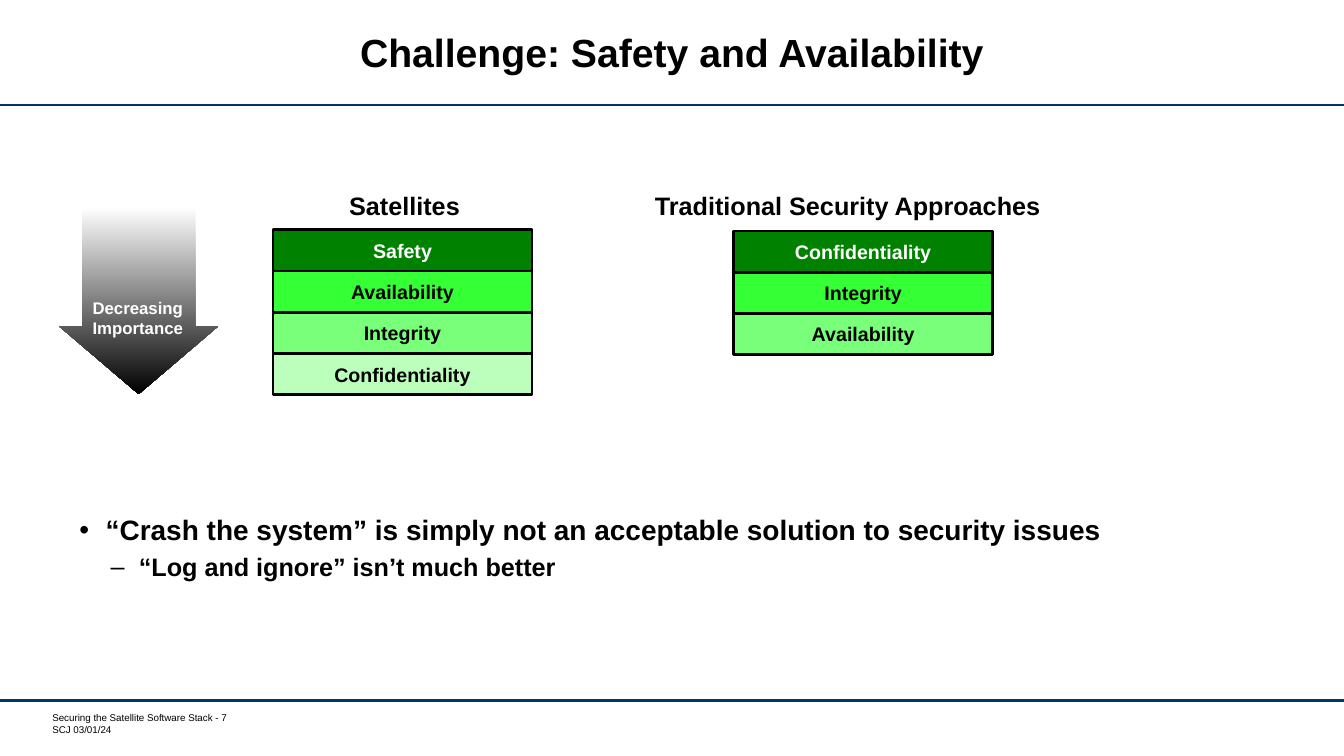
from dataclasses import dataclass

from lxml import etree
from pptx import Presentation
from pptx import util as u
from pptx.dml.color import RGBColor
from pptx.enum import shapes, text
from pptx.oxml import ns

FONT = "Arial"
BLACK, WHITE, NAVY = "000000", "FFFFFF", "003767"
RANK_FILLS = ["008200", "35FF35", "79FF79", "BCFFBC"]
RANK_WIDTH, RANK_HEIGHT = 6.53, 1.04
SLIDE_WIDTH, SLIDE_HEIGHT = 33.87, 19.05


@dataclass
class Box:
    """Position and size in centimetres."""
    left: float
    top: float
    width: float
    height: float

    def lengths(self) -> list[u.Cm]:
        return [u.Cm(n) for n in (self.left, self.top, self.width, self.height)]


@dataclass
class Ranking:
    heading: str
    heading_box: Box
    left: float
    top: float
    goals: list[str]


@dataclass
class Bullet:
    wording: str
    mark: str
    size: float
    margin: float
    hanging: float
    space_before: float


RANKINGS = [
    Ranking("Satellites", Box(8.53, 4.67, 3.33, 1.02), 6.88, 5.79,
            ["Safety", "Availability", "Integrity", "Confidentiality"]),
    Ranking("Traditional Security Approaches", Box(16.21, 4.67, 10.31, 1.02), 18.49, 5.82,
            ["Confidentiality", "Integrity", "Availability"]),
]
BULLETS = [
    Bullet("“Crash the system” is simply not an acceptable solution to security issues",
           "•", 20, 0.66, 0.66, 0),
    Bullet("“Log and ignore” isn’t much better", "–", 18, 1.5, 0.71, 6),
]


def color(hex_value: str) -> RGBColor:
    return RGBColor.from_string(hex_value)


def format_paragraph(paragraph, size: float, hex_value: str = BLACK, bold: bool = True,
                     alignment=text.PP_ALIGN.CENTER) -> None:
    paragraph.alignment = alignment
    for run in paragraph.runs:
        run.font.name = FONT
        run.font.size = u.Pt(size)
        run.font.bold = bold
        run.font.color.rgb = color(hex_value)


def add_label(slide, box: Box, wording: str, size: float, hex_value: str = BLACK,
              wrap: bool = False) -> None:
    frame = slide.shapes.add_textbox(*box.lengths()).text_frame
    frame.word_wrap = wrap
    frame.text = wording
    format_paragraph(frame.paragraphs[0], size, hex_value)


def add_rule(slide, top: float) -> None:
    rule = slide.shapes.add_connector(shapes.MSO_CONNECTOR.STRAIGHT, 0, u.Cm(top),
                                      u.Cm(SLIDE_WIDTH), u.Cm(top))
    rule.line.color.rgb = color(NAVY)
    rule.line.width = u.Pt(1.75)
    etree.SubElement(rule._element.spPr, ns.qn("a:effectLst"))


def add_title(slide, wording: str) -> None:
    title = slide.shapes.title
    title.left, title.top, title.width, title.height = Box(3.48, 0.28, 26.9, 2.26).lengths()
    frame = title.text_frame
    frame.text = wording
    frame.vertical_anchor = text.MSO_ANCHOR.MIDDLE
    frame.paragraphs[0].line_spacing = u.Pt(28)
    format_paragraph(frame.paragraphs[0], 28)


def add_footer(slide, wording: str) -> None:
    frame = slide.shapes.add_textbox(*Box(1.19, 17.93, 5.18, 0.61).lengths()).text_frame
    frame.word_wrap = True
    frame.margin_left = u.Cm(0.13)
    frame.margin_top = frame.margin_right = frame.margin_bottom = 0
    frame.text = wording
    for paragraph in frame.paragraphs:
        format_paragraph(paragraph, 7, bold=False, alignment=text.PP_ALIGN.LEFT)


def add_bullets(slide, box: Box, bullets: list[Bullet]) -> None:
    frame = slide.shapes.add_textbox(*box.lengths()).text_frame
    frame.word_wrap = True
    frame.text = "\n".join(bullet.wording for bullet in bullets)
    for level, (paragraph, bullet) in enumerate(zip(frame.paragraphs, bullets)):
        properties = paragraph._p.get_or_add_pPr()
        properties.set("marL", str(u.Cm(bullet.margin)))
        properties.set("indent", str(-u.Cm(bullet.hanging)))
        etree.SubElement(properties, ns.qn("a:buFont"), typeface=FONT)
        etree.SubElement(properties, ns.qn("a:buChar"), char=bullet.mark)
        paragraph.level = level
        paragraph.line_spacing = 0.9
        paragraph.space_before = u.Pt(bullet.space_before)
        format_paragraph(paragraph, bullet.size, alignment=text.PP_ALIGN.LEFT)


def add_ranking(slide, ranking: Ranking) -> None:
    add_label(slide, ranking.heading_box, ranking.heading, 18)
    for rank, (goal, fill) in enumerate(zip(ranking.goals, RANK_FILLS)):
        box = Box(ranking.left, ranking.top + rank * RANK_HEIGHT, RANK_WIDTH, RANK_HEIGHT)
        bar = slide.shapes.add_shape(shapes.MSO_SHAPE.RECTANGLE, *box.lengths())
        bar.shadow.inherit = False
        bar.fill.solid()
        bar.fill.fore_color.rgb = color(fill)
        bar.line.color.rgb = color(BLACK)
        bar.line.width = u.Pt(2)
        bar.text_frame.text = goal
        bar.text_frame.vertical_anchor = text.MSO_ANCHOR.MIDDLE
        format_paragraph(bar.text_frame.paragraphs[0], 14, BLACK if rank else WHITE)


def add_importance_arrow(slide) -> None:
    arrow = slide.shapes.add_shape(shapes.MSO_SHAPE.DOWN_ARROW,
                                   *Box(1.5, 5.21, 3.99, 4.72).lengths())
    arrow.shadow.inherit = False
    arrow.adjustments[0], arrow.adjustments[1] = 0.715, 0.426
    arrow.line.fill.background()
    arrow.fill.gradient()
    arrow.fill.gradient_angle = 270
    for stop, hex_value in zip(arrow.fill.gradient_stops, (WHITE, BLACK)):
        stop.color.rgb = color(hex_value)
    add_label(slide, Box(1.75, 7.37, 3.45, 1.27), "Decreasing Importance", 12, WHITE, wrap=True)


def main() -> None:
    presentation = Presentation()
    presentation.slide_width = u.Cm(SLIDE_WIDTH)
    presentation.slide_height = u.Cm(SLIDE_HEIGHT)
    slide = presentation.slides.add_slide(presentation.slide_layouts.get_by_name("Title Only"))

    # Frame of the slide
    for top in (2.64, 17.65):
        add_rule(slide, top)
    add_footer(slide, "Securing the Satellite Software Stack - 7\nSCJ 03/01/24")
    add_title(slide, "Challenge: Safety and Availability")

    # Ranked security goals
    for ranking in RANKINGS:
        add_ranking(slide, ranking)
    add_importance_arrow(slide)

    # Conclusions
    add_bullets(slide, Box(1.75, 12.88, 28.09, 4.11), BULLETS)

    presentation.save("out.pptx")


if __name__ == "__main__":
    main()
